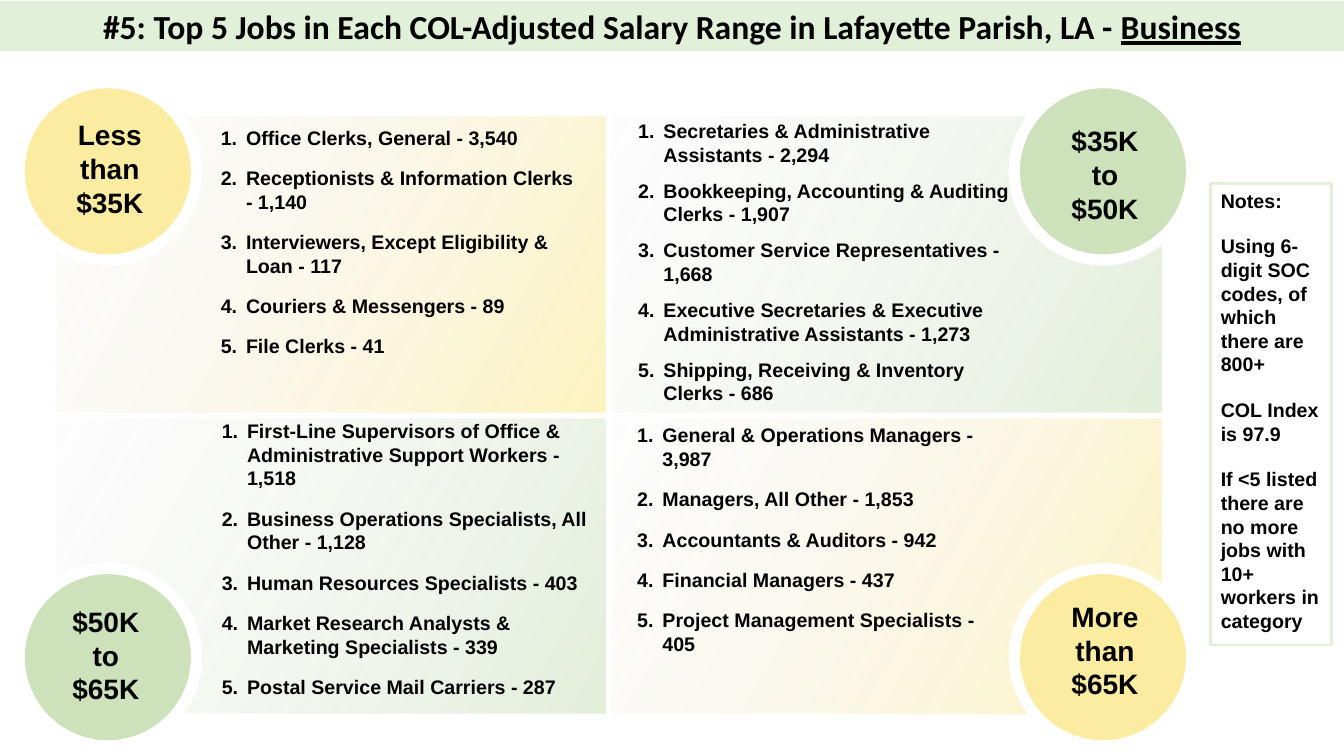
"""Build the slide of top business jobs by salary range in Lafayette Parish."""
from lxml import etree
from pptx import Presentation
from pptx.dml.color import RGBColor
from pptx.enum.shapes import MSO_SHAPE
from pptx.enum.text import MSO_ANCHOR, MSO_AUTO_SIZE, PP_ALIGN
from pptx.oxml.ns import qn
from pptx.util import Inches, Pt

TITLE = "#5: Top 5 Jobs in Each COL-Adjusted Salary Range in Lafayette Parish, LA - "
FIELD = "Business"
NOTES = [
    "Notes:",
    "Using 6-digit SOC codes, of which there are 800+",
    "COL Index is 97.9",
    "If <5 listed there are no more jobs with 10+ workers in category",
]

RECTANGLE, OVAL = MSO_SHAPE.RECTANGLE, MSO_SHAPE.OVAL
TOP, MIDDLE = MSO_ANCHOR.TOP, MSO_ANCHOR.MIDDLE
LEFT, CENTER = PP_ALIGN.LEFT, PP_ALIGN.CENTER
NO_FIT = MSO_AUTO_SIZE.NONE
BLACK = RGBColor(0x00, 0x00, 0x00)
WHITE = RGBColor(0xFF, 0xFF, 0xFF)
FADE = RGBColor(0xF2, 0xF2, 0xF2)
BANNER = RGBColor(0xE1, 0xF0, 0xD8)
GREEN = RGBColor(0xCD, 0xE1, 0xBA)
PALE_GREEN = RGBColor(0xE4, 0xEF, 0xDA)
YELLOW = RGBColor(0xFB, 0xEC, 0xA1)
PALE_YELLOW = RGBColor(0xFD, 0xF3, 0xC1)

RANGES = [
    dict(cell=(0, 0), label="Less than $35K", label_at=(0.56, 1.12),
         colors=(YELLOW, PALE_YELLOW), jobs_box=(2.09, 1.2, 3.78, 2.42), gap=12,
         jobs=["Office Clerks, General - 3,540",
               "Receptionists & Information Clerks - 1,140",
               "Interviewers, Except Eligibility & Loan - 117",
               "Couriers & Messengers - 89",
               "File Clerks - 41"]),
    dict(cell=(1, 0), label="$35K to $50K", label_at=(10.43, 1.18),
         colors=(GREEN, PALE_GREEN), jobs_box=(6.23, 1.13, 3.95, 2.96), gap=9,
         jobs=["Secretaries & Administrative Assistants - 2,294",
               "Bookkeeping, Accounting & Auditing Clerks - 1,907",
               "Customer Service Representatives - 1,668",
               "Executive Secretaries & Executive Administrative Assistants - 1,273",
               "Shipping, Receiving & Inventory Clerks - 686"]),
    dict(cell=(0, 1), label="$50K to $65K", label_at=(0.52, 5.95),
         colors=(GREEN, PALE_GREEN), jobs_box=(2.1, 4.11, 3.91, 2.89), gap=12,
         jobs=["First-Line Supervisors of Office & Administrative Support Workers - 1,518",
               "Business Operations Specialists, All Other - 1,128",
               "Human Resources Specialists - 403",
               "Market Research Analysts & Marketing Specialists - 339",
               "Postal Service Mail Carriers - 287"]),
    dict(cell=(1, 1), label="More than $65K", label_at=(10.43, 5.9),
         colors=(YELLOW, PALE_YELLOW), jobs_box=(6.22, 4.15, 3.89, 2.42), gap=12,
         jobs=["General & Operations Managers - 3,987",
               "Managers, All Other - 1,853",
               "Accountants & Auditors - 942",
               "Financial Managers - 437",
               "Project Management Specialists - 405"]),
]

SLIDE_W, SLIDE_H = 13.33, 7.5
GRID_X, GRID_Y = 0.56, 1.16
PANEL_W, PANEL_H, PANEL_GAP = 5.45, 2.93, 0.06
CIRCLE, CIRCLE_X, CIRCLE_Y = 1.76, (0.19, 10.06), (0.82, 5.64)


def write(frame, lines, size=14, font="Arial", align=LEFT, anchor=TOP, gap=0,
          numbered=False, underlined=""):
    """Fill a text frame with one bold paragraph per line."""
    frame.word_wrap, frame.auto_size = True, NO_FIT
    frame.vertical_anchor = anchor
    frame.margin_left = frame.margin_right = Inches(0.1)
    frame.margin_top = frame.margin_bottom = Inches(0.05)
    for number, line in enumerate(lines):
        paragraph = frame.add_paragraph() if number else frame.paragraphs[0]
        paragraph.alignment = align
        paragraph.line_spacing = 1.0
        paragraph.space_before, paragraph.space_after = Pt(0), Pt(gap)
        for text in filter(None, (line, underlined)):
            run = paragraph.add_run()
            run.text = text
            run.font.name, run.font.size, run.font.bold = font, Pt(size), True
            run.font.color.rgb = BLACK
            if text == underlined:
                run.font.underline = True
        if numbered:
            properties = paragraph._p.get_or_add_pPr()
            properties.set("marL", str(Inches(0.25)))
            properties.set("indent", str(-Inches(0.25)))
            etree.SubElement(properties, qn("a:buFont"), typeface="Arial")
            etree.SubElement(properties, qn("a:buAutoNum"), type="arabicPeriod")


def draw(slide, kind, box, fill=None, line=None, width=0):
    """Add a flat preset shape."""
    shape = slide.shapes.add_shape(kind, *map(Inches, box))
    shape.shadow.inherit = False
    if fill is None:
        shape.fill.background()
    else:
        shape.fill.solid()
        shape.fill.fore_color.rgb = fill
    if line is None:
        shape.line.fill.background()
    else:
        shape.line.color.rgb, shape.line.width = line, Pt(width)
    return shape


def fade(panel, color):
    """Shade a panel from nearly clear at upper left to a colour at lower right."""
    panel.fill.gradient()
    panel.fill.gradient_angle = 330
    start, end = panel.fill.gradient_stops
    start.position, start.color.rgb = 0, FADE
    end.position, end.color.rgb = 0.98, color
    clear = panel._element.spPr.find(".//" + qn("a:srgbClr"))
    etree.SubElement(clear, qn("a:alpha"), val="13000")


def place(slide, placeholder, box):
    """Position a placeholder in front of the shapes drawn so far."""
    (placeholder.left, placeholder.top,
     placeholder.width, placeholder.height) = map(Inches, box)
    slide.shapes._spTree.append(placeholder._element)


def main():
    """Compose and save the slide."""
    deck = Presentation()
    deck.slide_width, deck.slide_height = Inches(SLIDE_W), Inches(SLIDE_H)
    slide = deck.slides.add_slide(deck.slide_layouts[4])
    title, *job_lists = list(slide.placeholders)

    for salary, job_list in zip(RANGES, job_lists):
        column, row = salary["cell"]
        strong, pale = salary["colors"]
        panel = draw(slide, RECTANGLE, (GRID_X + column * (PANEL_W + PANEL_GAP),
                                        GRID_Y + row * (PANEL_H + PANEL_GAP),
                                        PANEL_W, PANEL_H))
        fade(panel, pale)
        draw(slide, OVAL, (CIRCLE_X[column], CIRCLE_Y[row], CIRCLE, CIRCLE),
             fill=strong, line=WHITE, width=8)
        label = slide.shapes.add_textbox(*map(Inches, (*salary["label_at"], 1.06, 1.14)))
        write(label.text_frame, [salary["label"]], size=20, align=CENTER)
        place(slide, job_list, salary["jobs_box"])
        write(job_list.text_frame, salary["jobs"], gap=salary["gap"], numbered=True)

    place(slide, title, (0, 0.01, SLIDE_W, 0.5))
    title.fill.solid()
    title.fill.fore_color.rgb = BANNER
    write(title.text_frame, [TITLE], size=24, font="Calibri", align=CENTER,
          anchor=MIDDLE, underlined=FIELD)

    notes = draw(slide, RECTANGLE, (12.01, 1.82, 1.2, 4.58), line=PALE_GREEN, width=2)
    write(notes.text_frame, NOTES, gap=16)
    deck.save("out.pptx")


if __name__ == "__main__":
    main()
